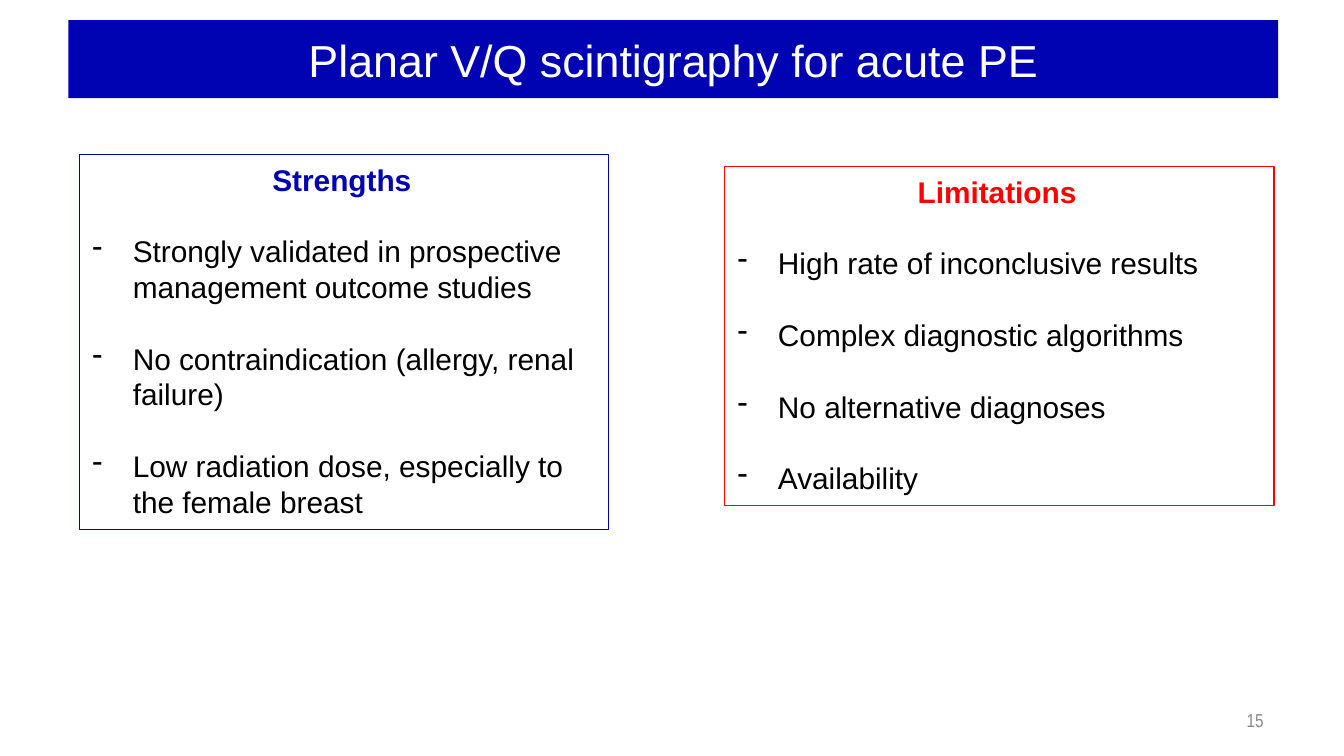
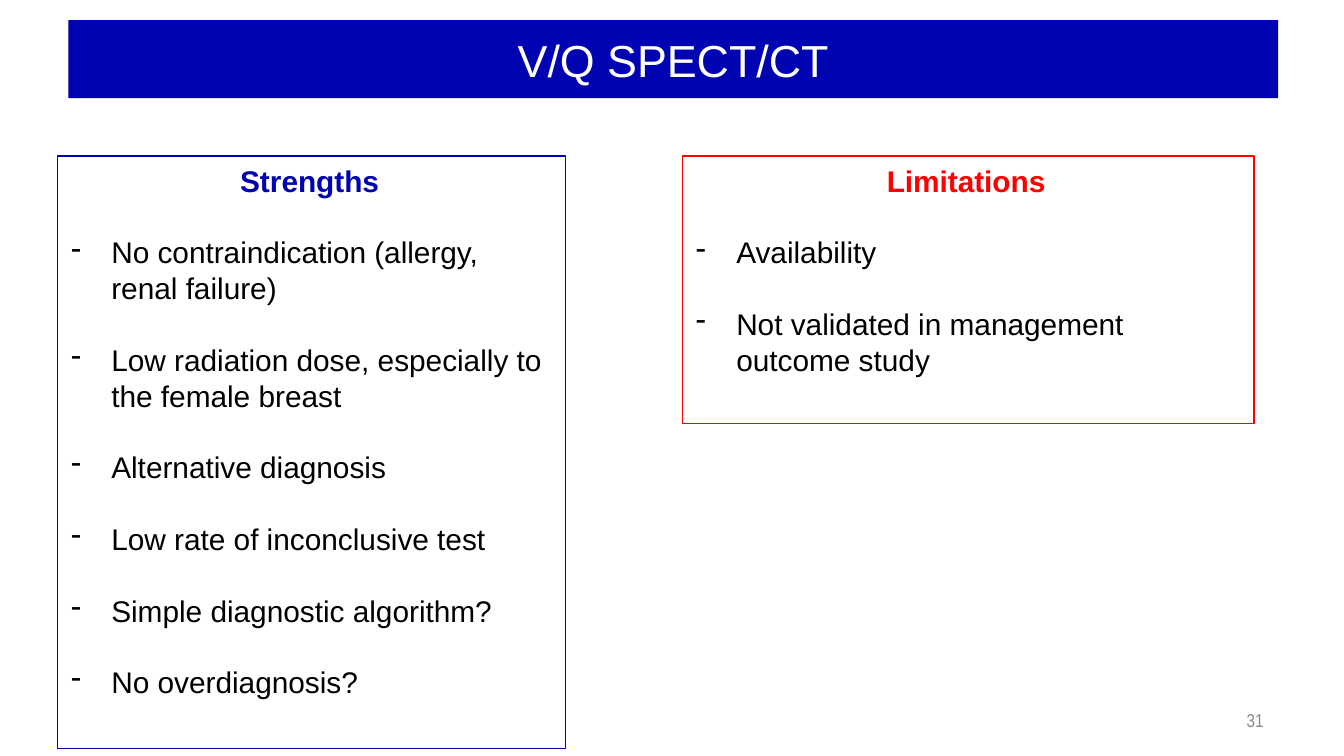
from lxml import etree
from pptx import Presentation
from pptx.dml.color import RGBColor
from pptx.enum.shapes import MSO_SHAPE
from pptx.enum.text import MSO_ANCHOR, PP_ALIGN
from pptx.oxml.ns import qn
from pptx.util import Inches, Pt

RECT = MSO_SHAPE.RECTANGLE
TOP, MIDDLE = MSO_ANCHOR.TOP, MSO_ANCHOR.MIDDLE
LEFT, CENTER, RIGHT = PP_ALIGN.LEFT, PP_ALIGN.CENTER, PP_ALIGN.RIGHT

COLORS = {"blue": "0003B1", "red": "FF0000", "black": "000000",
          "white": "FFFFFF", "grey": "898989"}

SLIDES = [
    {
        "title": "Planar V/Q scintigraphy for acute PE",
        "number": "15",
        "panels": [
            ("Limitations", "red", (5.39, 1.24, 4.09, 2.52), [
                "High rate of inconclusive results",
                "Complex diagnostic algorithms",
                "No alternative diagnoses",
                "Availability",
            ]),
            ("Strengths", "blue", (0.59, 1.15, 3.94, 2.79), [
                "Strongly validated in prospective management outcome studies",
                "No contraindication (allergy, renal failure)",
                "Low radiation dose, especially to the female breast",
            ]),
        ],
    },
    {
        "title": "V/Q SPECT/CT",
        "number": "31",
        "panels": [
            ("Limitations", "red", (5.08, 1.16, 4.25, 1.99), [
                "Availability",
                "Not validated in management outcome study",
            ]),
            ("Strengths", "blue", (0.43, 1.16, 3.78, 4.41), [
                "No contraindication (allergy, renal failure)",
                "Low radiation dose, especially to the female breast",
                "Alternative diagnosis",
                "Low rate of inconclusive test",
                "Simple diagnostic algorithm?",
                "No overdiagnosis?",
            ]),
        ],
    },
]

SLIDE_WIDTH = Inches(10)
SLIDE_HEIGHT = SLIDE_WIDTH * 9 // 16
TITLE_BOX = (0.51, 0.15, 9, 0.58)
NUMBER_BOX = (8.94, 5.21, 0.56, 0.3)
BULLET_INDENT = Inches(0.3)
LINE = Pt(19.2)

TITLE_FONT = {"name": "Arial", "size": Pt(24), "bold": False}
HEADING_FONT = {"name": "Arial", "size": Pt(16), "bold": True}
ITEM_FONT = {"name": "Arial", "size": Pt(16), "bold": False}
NUMBER_FONT = {"name": "Arial Narrow", "size": Pt(10), "bold": False}


def rgb(name):
    return RGBColor.from_string(COLORS[name])


def write(p, text, font, color, align):
    p.alignment = align
    r = p.add_run()
    r.text = text
    for key, value in font.items():
        setattr(r.font, key, value)
    r.font.color.rgb = rgb(color)


def add_rect(slide, box, fill=None, line=None):
    sp = slide.shapes.add_shape(RECT, *map(Inches, box))
    sp.shadow.inherit = False
    if fill:
        sp.fill.solid()
        sp.fill.fore_color.rgb = rgb(fill)
    else:
        sp.fill.background()
    if line:
        sp.line.color.rgb = rgb(line)
        sp.line.width = Pt(0.75)
    else:
        sp.line.fill.background()
    return sp


def set_dash(p):
    """Give the paragraph a hanging dash bullet."""
    pPr = p._p.get_or_add_pPr()
    pPr.set("marL", str(BULLET_INDENT))
    pPr.set("indent", str(-BULLET_INDENT))
    etree.SubElement(pPr, qn("a:buFontTx"))
    etree.SubElement(pPr, qn("a:buChar")).set("char", "-")


def add_panel(slide, heading, color, box, items):
    tf = add_rect(slide, box, line=color).text_frame
    tf.word_wrap = True
    tf.vertical_anchor = TOP
    tf.margin_right = Inches(0.13)
    p = tf.paragraphs[0]
    p.line_spacing = LINE
    write(p, heading, HEADING_FONT, color, CENTER)
    for item in items:
        p = tf.add_paragraph()
        set_dash(p)
        p.line_spacing = p.space_before = LINE
        write(p, item, ITEM_FONT, "black", LEFT)


def add_title(slide, text):
    tf = add_rect(slide, TITLE_BOX, fill="blue").text_frame
    tf.word_wrap = True
    tf.vertical_anchor = MIDDLE
    write(tf.paragraphs[0], text, TITLE_FONT, "white", CENTER)


def add_number(slide, text):
    tf = slide.shapes.add_textbox(*map(Inches, NUMBER_BOX)).text_frame
    tf.word_wrap = True
    tf.vertical_anchor = MIDDLE
    write(tf.paragraphs[0], text, NUMBER_FONT, "grey", RIGHT)


def main():
    prs = Presentation()
    prs.slide_width, prs.slide_height = SLIDE_WIDTH, SLIDE_HEIGHT
    blank = prs.slide_layouts[6]
    for content in SLIDES:
        slide = prs.slides.add_slide(blank)
        add_title(slide, content["title"])
        for panel in content["panels"]:
            add_panel(slide, *panel)
        add_number(slide, content["number"])
    prs.save("out.pptx")


if __name__ == "__main__":
    main()
